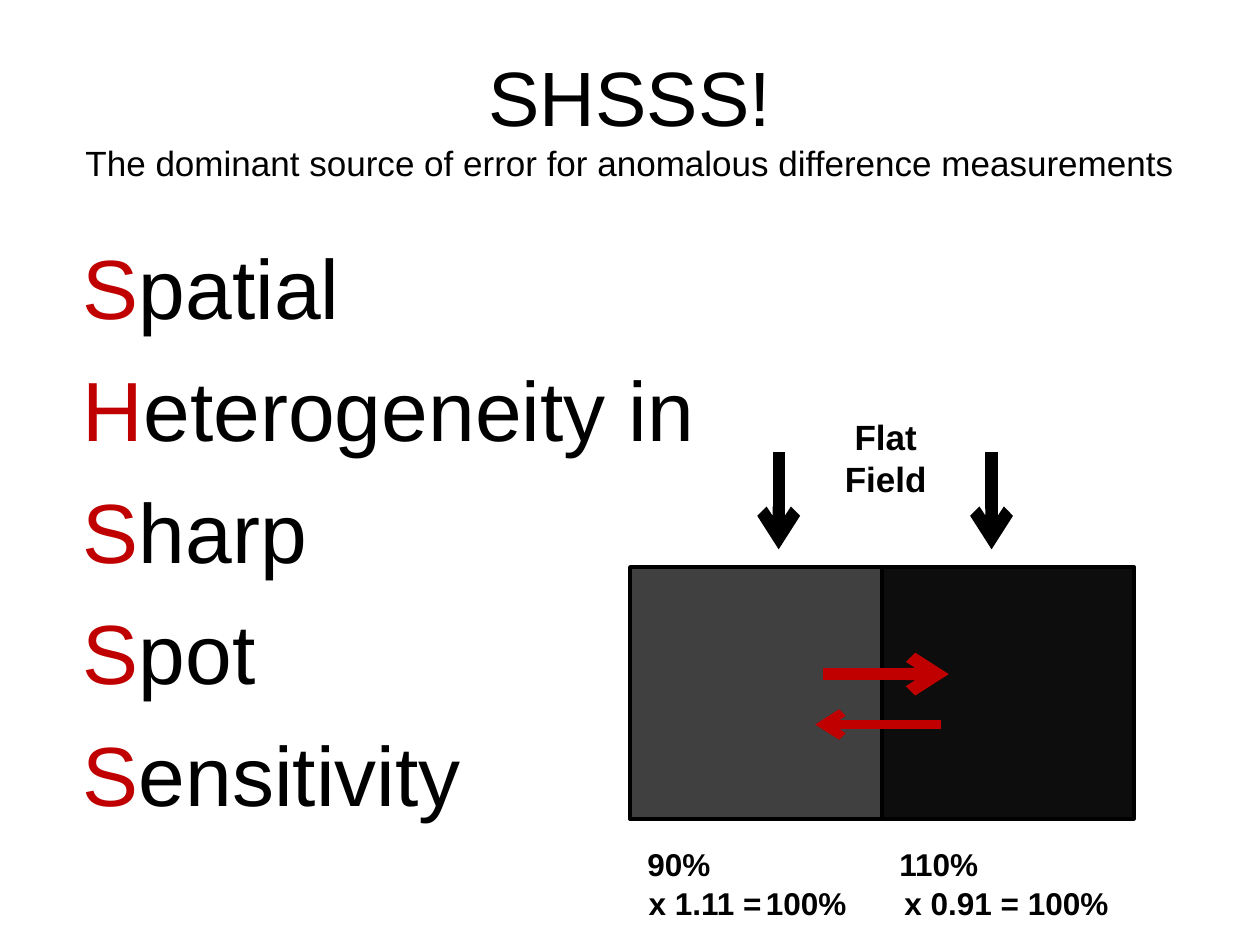
from typing import NamedTuple

from lxml import etree
from pptx import Presentation
from pptx.dml.color import RGBColor
from pptx.enum.shapes import MSO_CONNECTOR, MSO_SHAPE
from pptx.enum.text import MSO_ANCHOR, PP_ALIGN
from pptx.oxml.ns import qn
from pptx.util import Inches, Pt

BLACK, RED = "000000", "C00000"


class Pixel(NamedTuple):
    x: float
    fill: str


class Arrow(NamedTuple):
    x1: float
    y1: float
    x2: float
    y2: float
    color: str
    width: float


class Label(NamedTuple):
    text: str
    x: float
    y: float
    w: float


PIXELS = [Pixel(5, "404040"), Pixel(7, "0D0D0D")]
ARROWS = [
    Arrow(6.18, 3.59, 6.18, 4.36, BLACK, 7),
    Arrow(7.87, 3.59, 7.87, 4.36, BLACK, 7),
    Arrow(6.53, 5.35, 7.53, 5.35, RED, 7),
    Arrow(7.47, 5.75, 6.47, 5.75, RED, 5),
]
LABELS = [
    Label("90%", 5.04, 6.66, 1.96),
    Label("110%", 7.04, 6.66, 2.07),
    Label("x 1.11 =", 5.05, 6.97, 1.14),
    Label("x 0.91 =", 7.08, 6.97, 1.25),
    Label("100%", 8.06, 6.97, 0.94),
    Label("100%", 5.98, 6.97, 1.02),
]
WORDS = ["Spatial", "Heterogeneity in", "Sharp", "Spot", "Sensitivity"]


def rgb(color: str) -> RGBColor:
    return RGBColor.from_string(color)


def add_box(s, x: float, y: float, w: float, h: float, wrap: bool = True):
    """Add an empty text box and return its text frame."""
    tf = s.shapes.add_textbox(Inches(x), Inches(y), Inches(w), Inches(h)).text_frame
    tf.word_wrap = wrap
    return tf


def add_run(p, text: str, *, size: float, color: str = BLACK, bold: bool = False) -> None:
    r = p.add_run()
    r.text = text
    r.font.name = "Arial"
    r.font.size = Pt(size)
    r.font.bold = bold
    r.font.color.rgb = rgb(color)


def add_title(s) -> None:
    tf = add_box(s, 0.5, 0.3, 9, 1.25)
    tf.vertical_anchor = MSO_ANCHOR.MIDDLE
    p = tf.paragraphs[0]
    p.alignment = PP_ALIGN.CENTER
    add_run(p, "SHSSS!", size=44)
    p.add_line_break()
    add_run(p, "The dominant source of error for anomalous difference measurements", size=20)


def add_acronym(s) -> None:
    tf = add_box(s, 0.56, 1.75, 5.21, 4.95)
    tf.margin_top = Inches(0.12)
    for i, word in enumerate(WORDS):
        p = tf.add_paragraph() if i else tf.paragraphs[0]
        p.space_before = Pt(12 if i else 0)
        add_run(p, word[0], size=48, color=RED)
        add_run(p, word[1:], size=48)


def add_pixel(s, pixel: Pixel) -> None:
    sp = s.shapes.add_shape(
        MSO_SHAPE.RECTANGLE, Inches(pixel.x), Inches(4.5), Inches(2), Inches(2))
    sp.shadow.inherit = False
    sp.fill.solid()
    sp.fill.fore_color.rgb = rgb(pixel.fill)
    sp.line.color.rgb = rgb(BLACK)
    sp.line.width = Pt(2)


def add_field_label(s) -> None:
    tf = add_box(s, 6.6, 3.25, 0.86, 0.77, wrap=False)
    for i, word in enumerate(["Flat", "Field"]):
        p = tf.add_paragraph() if i else tf.paragraphs[0]
        p.alignment = PP_ALIGN.CENTER
        add_run(p, word, size=20, bold=True)


def add_arrow(s, a: Arrow) -> None:
    c = s.shapes.add_connector(
        MSO_CONNECTOR.STRAIGHT, Inches(a.x1), Inches(a.y1), Inches(a.x2), Inches(a.y2))
    c.line.color.rgb = rgb(a.color)
    c.line.width = Pt(a.width)
    sp_pr = c._element.spPr
    etree.SubElement(sp_pr.find(qn("a:ln")), qn("a:tailEnd"), type="arrow")
    etree.SubElement(sp_pr, qn("a:effectLst"))


def add_label(s, label: Label) -> None:
    tf = add_box(s, label.x, label.y, label.w, 0.4)
    add_run(tf.paragraphs[0], label.text, size=18, bold=True)


def main() -> None:
    prs = Presentation()
    prs.slide_width, prs.slide_height = Inches(10), Inches(7.5)
    s = prs.slides.add_slide(prs.slide_layouts[6])
    add_title(s)
    add_acronym(s)
    for pixel in PIXELS:
        add_pixel(s, pixel)
    add_field_label(s)
    for arrow in ARROWS:
        add_arrow(s, arrow)
    for label in LABELS:
        add_label(s, label)
    prs.save("out.pptx")


if __name__ == "__main__":
    main()
